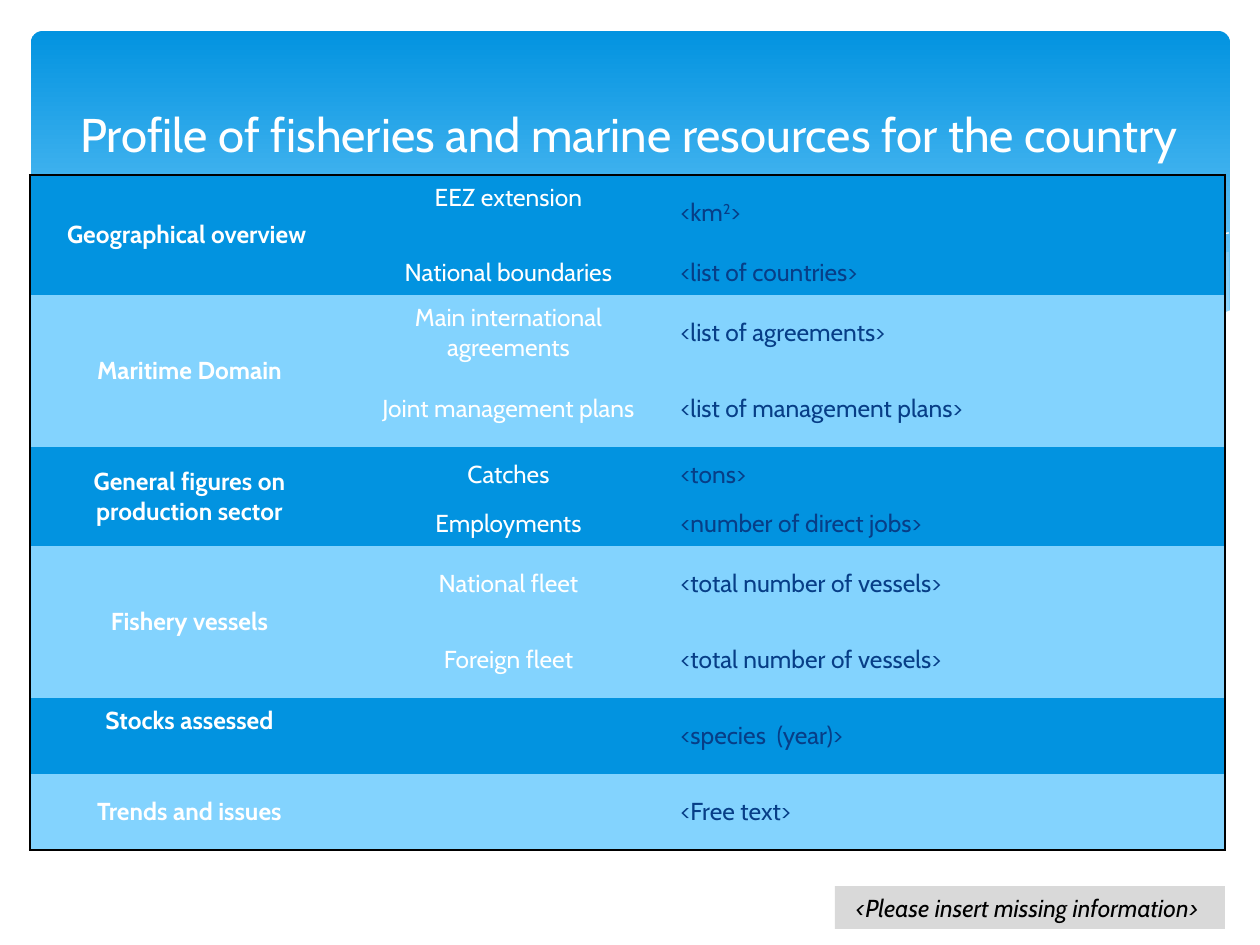
from lxml import etree
from pptx import Presentation
from pptx.dml.color import RGBColor
from pptx.enum.shapes import MSO_SHAPE
from pptx.enum.text import MSO_ANCHOR, PP_ALIGN
from pptx.oxml.ns import qn
from pptx.util import Pt

ROUND_RECT, RECT = MSO_SHAPE.ROUNDED_RECTANGLE, MSO_SHAPE.RECTANGLE
LEFT, CENTER = PP_ALIGN.LEFT, PP_ALIGN.CENTER
MIDDLE = MSO_ANCHOR.MIDDLE

PX = 914400 / 126
FONT = "Cabin"
BLUE = RGBColor(0x02, 0x93, 0xE0)
SKY = RGBColor(0x83, 0xD3, 0xFE)
MIST = RGBColor(0xC6, 0xE7, 0xFC)
NAVY = RGBColor(0x07, 0x3E, 0x87)
GREY = RGBColor(0xD9, 0xD9, 0xD9)
WHITE = RGBColor(0xFF, 0xFF, 0xFF)
BLACK = RGBColor(0x00, 0x00, 0x00)
NO_STYLE = "{2D5ABB26-0587-4C30-8999-92F81FD0307C}"

COLUMNS = [319, 319, 557]
ROWS = [76, 44, 76, 76, 55, 44, 76, 76, 76, 76]
LINE = 30
GROUPS = [
    ("Geographical overview ", [("EEZ extension", "<km^2^>"),
                                ("National boundaries", "<list of countries>")]),
    ("Maritime Domain", [("Main international agreements", "<list of agreements>"),
                         ("Joint management plans", "<list of management plans>")]),
    ("General figures on production sector", [("Catches", "<tons>"),
                                              ("Employments", "<number of direct jobs>")]),
    ("Fishery vessels", [("National fleet", "<total number of vessels>"),
                         ("Foreign fleet", "<total number of vessels>")]),
    ("Stocks assessed", [("", "<species  (year)>")]),
    ("Trends and issues", [("", "<Free text>")]),
]
RAISED = ("EEZ extension", "Stocks assessed")

RIGHT_SWELL = [
    (1229, 252), (1194, 257), (1142, 268), (1085, 281), (1014, 299), (949, 312),
    (889, 324), (833, 334), (888, 341), (938, 346), (984, 349), (1026, 350),
    (1064, 349), (1099, 346), (1130, 341), (1160, 335), (1187, 326), (1213, 318),
    (1229, 311)]
MIDDLE_SWELL = [
    (1125, 344), (1091, 339), (1014, 328), (934, 311), (842, 291), (793, 280),
    (736, 266), (682, 255), (632, 247), (586, 241), (529, 235), (479, 233),
    (433, 234), (394, 237), (360, 241), (407, 247), (456, 256), (509, 266),
    (566, 280), (619, 292), (713, 312), (779, 325), (838, 335), (893, 343),
    (942, 348), (989, 350), (1068, 350), (1104, 347)]
LONG_CREST = [
    (389, 246), (413, 242), (445, 239), (488, 236), (545, 236), (591, 238),
    (643, 242), (701, 248), (766, 257), (838, 268), (916, 285), (1002, 304),
    (1095, 329), (1143, 343)]
RIGHT_CREST = [
    (772, 324), (823, 310), (876, 296), (942, 281), (1016, 265), (1091, 251),
    (1146, 242), (1198, 236), (1229, 233)]
WHITE_WAVE = [
    (1231, 310), (1208, 319), (1172, 330), (1133, 339), (1087, 344), (1037, 349),
    (980, 348), (915, 344), (842, 337), (763, 325), (699, 314), (634, 301),
    (563, 277), (493, 260), (428, 248), (368, 239), (315, 234), (266, 232),
    (223, 232), (184, 233), (150, 236), (120, 241), (96, 246), (74, 253),
    (58, 258), (45, 262), (29, 268), (29, 415), (1231, 415)]


def px(value):
    return round(value * PX)


def put_text(tf, text, size=14, color=WHITE, bold=False, italic=False, align=CENTER):
    p = tf.paragraphs[0]
    p.alignment = align
    for i, part in enumerate(text.split("^")):
        r = p.add_run()
        r.text = part
        r.font.name, r.font.size = FONT, Pt(size)
        r.font.bold, r.font.italic = bold, italic
        r.font.color.rgb = color
        if i % 2:
            r.font._element.set("baseline", "30000")


def add_box(slide, kind, x, y, w, h):
    sp = slide.shapes.add_shape(kind, px(x), px(y), px(w), px(h))
    sp.shadow.inherit = False
    sp.line.fill.background()
    return sp


def add_header(slide):
    sp = add_box(slide, ROUND_RECT, 31, 31, 1199, 340)
    sp.adjustments[0] = 0.034
    sp.fill.gradient()
    sp.fill.gradient_angle = 270
    for stop, color, position in zip(sp.fill.gradient_stops, (BLUE, SKY), (0, 0.9)):
        stop.color.rgb = color
        stop.position = position


def add_curve(slide, points, closed):
    builder = slide.shapes.build_freeform(*points[0], scale=PX)
    builder.add_line_segments(points[1:], close=closed)
    sp = builder.convert_to_shape()
    sp.shadow.inherit = False
    return sp


def add_wave(slide, points, color, opacity=100):
    sp = add_curve(slide, points, True)
    sp.line.fill.background()
    sp.fill.solid()
    sp.fill.fore_color.rgb = color
    if opacity < 100:
        clr = sp._element.spPr.find(qn("a:solidFill"))[0]
        etree.SubElement(clr, qn("a:alpha")).set("val", str(opacity * 1000))


def add_crest(slide, points):
    sp = add_curve(slide, points, False)
    sp.fill.background()
    sp.line.color.rgb = WHITE
    sp.line.width = Pt(0)


def add_title(slide, text):
    tf = slide.shapes.add_textbox(px(35), px(47), px(1198), px(173)).text_frame
    tf.word_wrap = True
    tf.vertical_anchor = MIDDLE
    put_text(tf, text, size=27)


def set_border(cell, side):
    ln = etree.SubElement(cell._tc.get_or_add_tcPr(), qn("a:ln" + side))
    ln.set("w", str(Pt(1.5)))
    fill = etree.SubElement(ln, qn("a:solidFill"))
    etree.SubElement(fill, qn("a:srgbClr")).set("val", str(BLACK))


def style_cell(table, row, col, color):
    cell = table.cell(row, col)
    edges = {"L": col == 0, "R": col == len(COLUMNS) - 1,
             "T": row == 0, "B": row == len(ROWS) - 1}
    for side, outer in edges.items():
        if outer:
            set_border(cell, side)
    cell.fill.solid()
    cell.fill.fore_color.rgb = color
    cell.vertical_anchor = MIDDLE


def fill_cell(cell, text, **fmt):
    if text:
        put_text(cell.text_frame, text, **fmt)
    if text in RAISED:
        cell.margin_bottom = cell.margin_bottom + px(LINE)


def add_profile_table(slide):
    frame = slide.shapes.add_table(len(ROWS), len(COLUMNS), px(30), px(175),
                                   px(sum(COLUMNS)), px(sum(ROWS)))
    table = frame.table
    table.first_row = table.horz_banding = False
    table._tbl.tblPr.find(qn("a:tableStyleId")).text = NO_STYLE
    for column, width in zip(table.columns, COLUMNS):
        column.width = px(width)
    for row, height in zip(table.rows, ROWS):
        row.height = px(height)
    top = 0
    for i, (topic, items) in enumerate(GROUPS):
        for row, (label, value) in enumerate(items, top):
            for col in range(len(COLUMNS)):
                style_cell(table, row, col, SKY if i % 2 else BLUE)
            fill_cell(table.cell(row, 1), label)
            fill_cell(table.cell(row, 2), value, color=NAVY, align=LEFT)
        fill_cell(table.cell(top, 0), topic, bold=True)
        if len(items) > 1:
            table.cell(top, 0).merge(table.cell(top + len(items) - 1, 0))
        top += len(items)


def add_note(slide, text):
    sp = add_box(slide, RECT, 835, 886, 390, 43)
    sp.fill.solid()
    sp.fill.fore_color.rgb = GREY
    sp.text_frame.word_wrap = False
    sp.text_frame.vertical_anchor = MIDDLE
    put_text(sp.text_frame, text, color=BLACK, italic=True)


def main():
    prs = Presentation()
    prs.slide_width, prs.slide_height = px(1260), px(945)
    slide = prs.slides.add_slide(prs.slide_layouts[6])
    add_header(slide)
    add_wave(slide, RIGHT_SWELL, MIST, opacity=29)
    add_wave(slide, MIDDLE_SWELL, MIST, opacity=40)
    add_crest(slide, LONG_CREST)
    add_crest(slide, RIGHT_CREST)
    add_wave(slide, WHITE_WAVE, WHITE)
    add_title(slide, "Profile of fisheries and marine resources for the country ")
    add_profile_table(slide)
    add_note(slide, "<Please insert missing information> ")
    prs.save("out.pptx")


if __name__ == "__main__":
    main()
